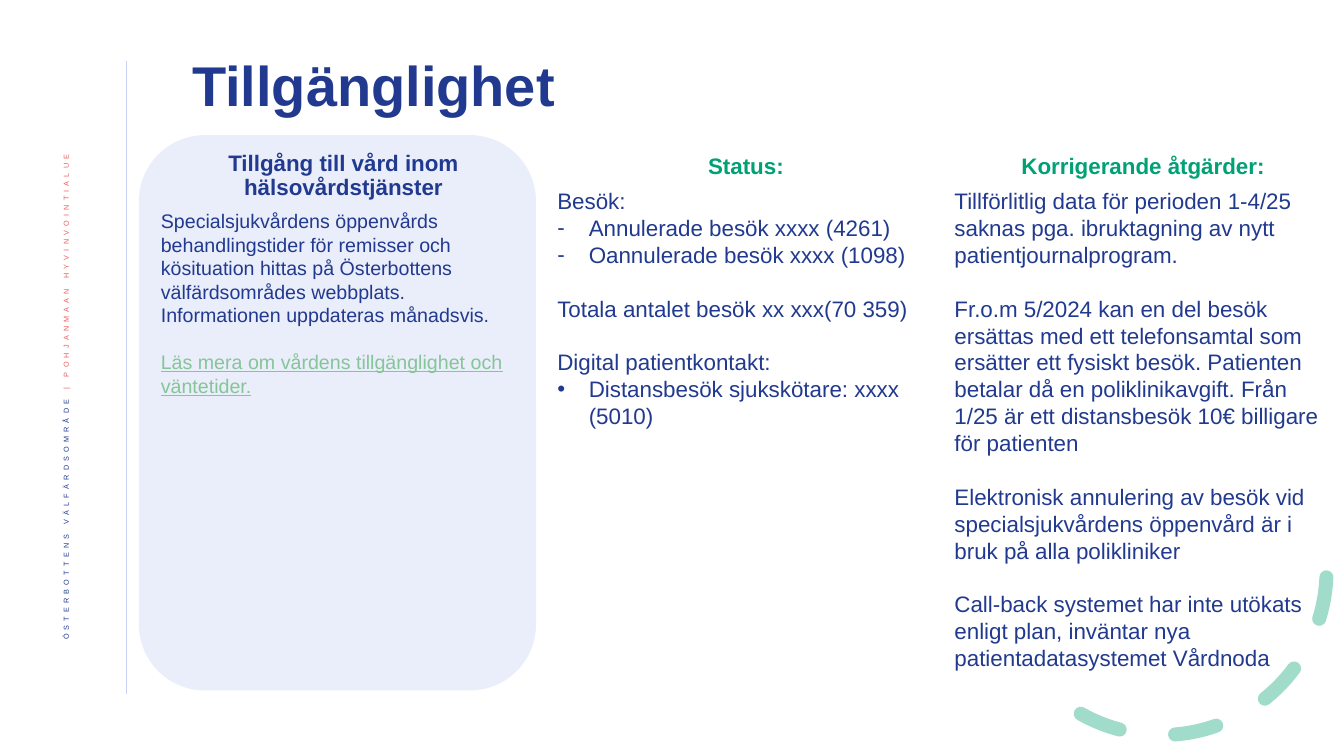
from lxml.etree import SubElement
from pptx import Presentation
from pptx.dml.color import RGBColor
from pptx.enum.dml import MSO_LINE
from pptx.enum.shapes import MSO_CONNECTOR, MSO_SHAPE
from pptx.enum.text import MSO_ANCHOR, PP_ALIGN
from pptx.oxml.ns import qn
from pptx.util import Pt

NAVY = RGBColor(0x21, 0x3A, 0x8F)
GREEN = RGBColor(0x00, 0xA1, 0x74)
LIGHT_GREEN = RGBColor(0x85, 0xC5, 0x98)
CORAL = RGBColor(0xEB, 0x5C, 0x5F)
LAVENDER = RGBColor(0xC9, 0xD2, 0xF2)
FONT = "Arial"

# Each paragraph: text, bullet, whether a gap of one line precedes it
ACCESS = [
    ("Specialsjukvårdens öppenvårds behandlingstider för remisser och kösituation "
     "hittas på Österbottens välfärdsområdes webbplats. Informationen uppdateras "
     "månadsvis.", None, False),
]
ACCESS_LINK = "Läs mera om vårdens tillgänglighet och väntetider."
STATUS = [
    ("Besök:", None, False),
    ("Annulerade besök xxxx (4261)", "-", False),
    ("Oannulerade besök xxxx (1098)", "-", False),
    ("Totala antalet besök xx xxx(70 359)", None, True),
    ("Digital patientkontakt:", None, True),
    ("Distansbesök sjukskötare: xxxx (5010)", "•", False),
]
ACTIONS = [
    ("Tillförlitlig data för perioden 1-4/25 saknas pga. ibruktagning av nytt "
     "patientjournalprogram.", None, False),
    ("Fr.o.m 5/2024 kan en del besök ersättas med ett telefonsamtal som ersätter "
     "ett fysiskt besök. Patienten betalar då en poliklinikavgift. Från 1/25 är "
     "ett distansbesök 10€ billigare för patienten", None, True),
    ("Elektronisk annulering av besök vid specialsjukvårdens öppenvård är i bruk "
     "på alla polikliniker", None, True),
    ("Call-back systemet har inte utökats enligt plan, inväntar nya "
     "patientadatasystemet Vårdnoda", None, True),
]


def set_alpha(color_parent, percent):
    color = next(color_parent.iter(qn("a:srgbClr")))
    SubElement(color, qn("a:alpha"), val=str(percent * 1000))


def add_span(para, text, size, color, bold=False):
    span = para.add_run()
    span.text = text
    font = span.font
    font.name, font.size, font.bold = FONT, Pt(size), bold
    font.color.rgb = color
    return span


def add_frame(page, left, top, width, height):
    box = page.shapes.add_textbox(Pt(left), Pt(top), Pt(width), Pt(height))
    box.text_frame.word_wrap = True
    return box.text_frame


def add_bullet(para, mark):
    props = para._p.get_or_add_pPr()
    indent = Pt(22.5)
    props.set("marL", str(indent))
    props.set("indent", str(-indent))
    SubElement(props, qn("a:buFont"), typeface=FONT)
    SubElement(props, qn("a:buChar"), char=mark)


def add_body_para(frame, text, size, color, mark=None, gap=False):
    para = frame.add_paragraph()
    if gap:
        para.space_before = Pt(size * 1.2)
    if mark:
        add_bullet(para, mark)
    return add_span(para, text, size, color)


def add_column(page, left, top, width, height, heading, color, items, size=16, spacing=None):
    frame = add_frame(page, left, top, width, height)
    head = frame.paragraphs[0]
    head.alignment = PP_ALIGN.CENTER
    head.space_after = Pt(6)
    head.line_spacing = spacing
    add_span(head, heading, 16, color, bold=True)
    for text, mark, gap in items:
        add_body_para(frame, text, size, NAVY, mark, gap)
    return frame


def add_access_panel(page, left, top, width, height):
    panel = page.shapes.add_shape(
        MSO_SHAPE.ROUNDED_RECTANGLE, Pt(left), Pt(top), Pt(width), Pt(height))
    panel.shadow.inherit = False
    panel.fill.solid()
    panel.fill.fore_color.rgb = LAVENDER
    set_alpha(panel.fill._xPr, 38)
    panel.line.fill.background()
    frame = add_column(page, left + 8.6, top + 8.6, width - 8.6, 184,
                       "Tillgång till vård inom hälsovårdstjänster", NAVY,
                       ACCESS, size=14, spacing=0.9)
    link = add_body_para(frame, ACCESS_LINK, 14, LIGHT_GREEN, gap=True)
    link.font.underline = True


def add_side_band(page, left, top, width, height):
    """Vertical organisation name with a thin rule on its right."""
    frame = add_frame(page, left, top + 59.5, 37.5, height - 38.5)
    frame.vertical_anchor = MSO_ANCHOR.MIDDLE
    frame._txBody.bodyPr.set("vert", "vert270")
    para = frame.paragraphs[0]
    para.alignment = PP_ALIGN.RIGHT
    para.line_spacing = 0.9
    for text, color in (("ÖSTERBOTTENS VÄLFÄRDSOMRÅDE ", NAVY),
                        ("| POHJANMAAN HYVINVOINTIALUE", CORAL)):
        props = add_span(para, text, 9, color).font._element
        props.set("baseline", "30000")
        props.set("spc", "300")
    right = left + width
    rule = page.shapes.add_connector(
        MSO_CONNECTOR.STRAIGHT, Pt(right), Pt(top), Pt(right), Pt(top + height))
    rule.line.color.rgb = LAVENDER
    rule.line.width = Pt(0.5)
    SubElement(rule._element.spPr, qn("a:effectLst"))


def add_title(page, left, top, width, height):
    frame = add_frame(page, left, top, width, height)
    frame.vertical_anchor = MSO_ANCHOR.MIDDLE
    para = frame.paragraphs[0]
    para.line_spacing = 0.9
    add_span(para, "Tillgänglighet", 40, NAVY, bold=True)


def add_dashed_arc(page, left, top, size):
    arc = page.shapes.add_shape(MSO_SHAPE.ARC, Pt(left), Pt(top), Pt(size), Pt(size))
    arc.shadow.inherit = False
    arc.adjustments[0] = 158.17
    arc.adjustments[1] = 17.81
    arc.rotation = 98.9
    arc.fill.background()
    arc.line.color.rgb = GREEN
    arc.line.width = Pt(10)
    arc.line.dash_style = MSO_LINE.DASH
    outline = arc.line._get_or_add_ln()
    outline.set("cap", "rnd")
    set_alpha(outline, 36)


def main():
    deck = Presentation()
    deck.slide_width, deck.slide_height = Pt(960), Pt(540)
    page = deck.slides.add_slide(deck.slide_layouts[6])
    add_side_band(page, 30.2, 43.9, 59.8, 451.5)
    add_dashed_arc(page, 712, 289.5, 235.5)
    add_title(page, 130.3, 32.4, 734.4, 61.2)
    add_access_panel(page, 99.2, 96.5, 283.7, 396.7)
    add_column(page, 391, 105.1, 283.7, 207.4, "Status:", GREEN, STATUS)
    add_column(page, 674.7, 105.1, 283.7, 403.2, "Korrigerande åtgärder:", GREEN, ACTIONS)
    deck.save("out.pptx")


if __name__ == "__main__":
    main()
